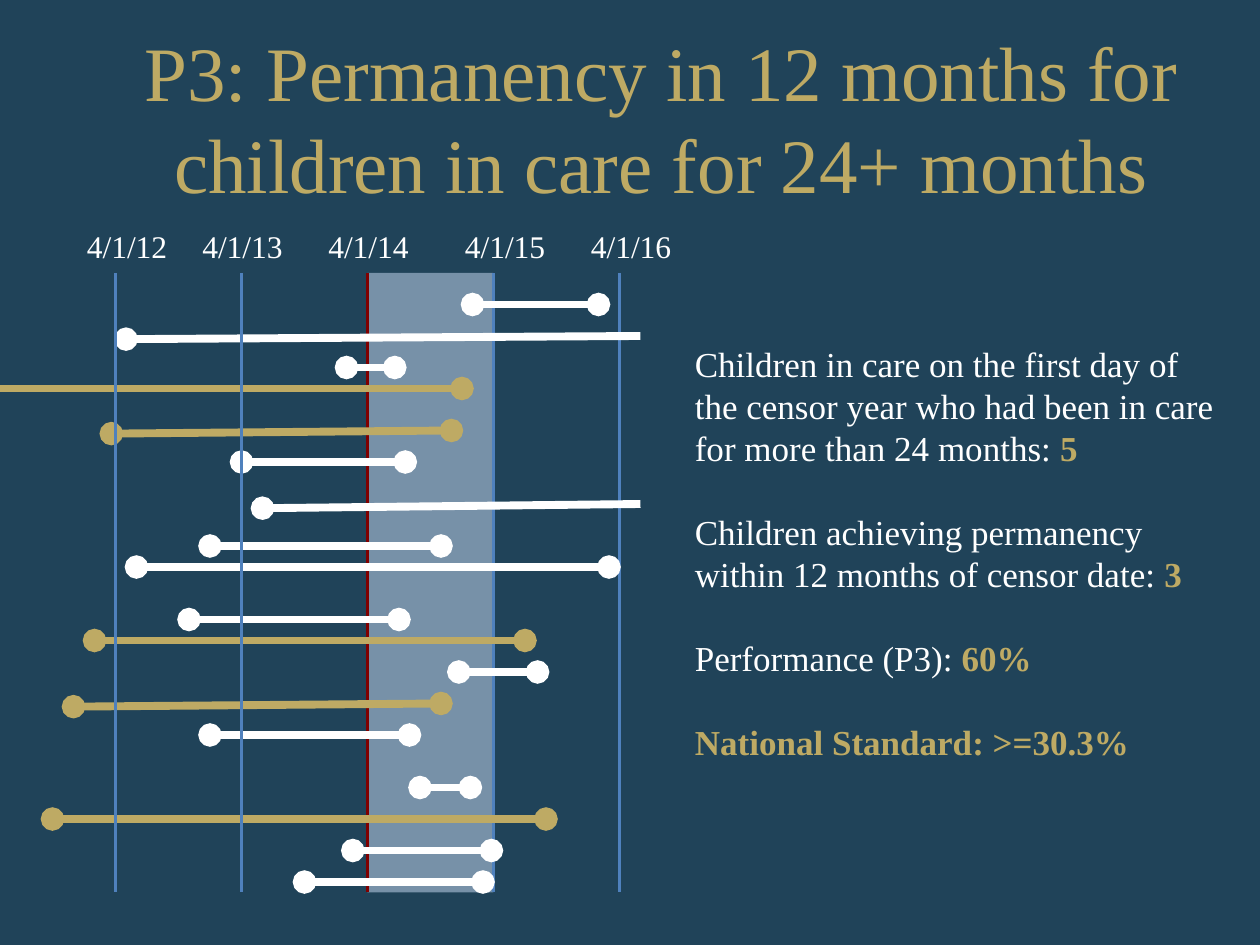
from dataclasses import dataclass

from lxml.etree import SubElement
from pptx import Presentation
from pptx.dml.color import RGBColor
from pptx.enum.shapes import MSO_CONNECTOR, MSO_SHAPE
from pptx.enum.text import MSO_ANCHOR, MSO_AUTO_SIZE, PP_ALIGN
from pptx.oxml.ns import qn
from pptx.util import Pt

PX = 7620


@dataclass(frozen=True)
class Theme:
    """Colours, font and type sizes of the slide."""
    back: str = "204359"
    gold: str = "BEAA64"
    white: str = "FFFFFF"
    blue: str = "4F81BD"
    red: str = "800000"
    band: str = "B9CDE5"
    font: str = "Times New Roman"
    title: int = 44
    body: int = 20
    label: int = 18
    rule: float = 2
    bar: float = 4.5


THEME = Theme()

DATES = [
    ("4/1/12", 110, 70),
    ("4/1/13", 230, 180),
    ("4/1/14", 350, 300),
    ("4/1/15", 470, 430),
    ("4/1/16", 590, 550),
]

STAYS = [
    (450, 30, 570, 30, THEME.white),
    (120, 63, 610, 60, THEME.white),
    (330, 90, 376, 90, THEME.white),
    (0, 110, 440, 110, THEME.gold),
    (106, 153, 430, 150, THEME.gold),
    (230, 180, 386, 180, THEME.white),
    (250, 224, 610, 220, THEME.white),
    (200, 260, 420, 260, THEME.white),
    (130, 280, 580, 280, THEME.white),
    (180, 330, 380, 330, THEME.white),
    (90, 350, 500, 350, THEME.gold),
    (437, 380, 512, 380, THEME.white),
    (70, 413, 420, 410, THEME.gold),
    (200, 440, 390, 440, THEME.white),
    (400, 490, 448, 490, THEME.white),
    (50, 520, 520, 520, THEME.gold),
    (336, 550, 468, 550, THEME.white),
    (290, 580, 460, 580, THEME.white),
]

FACTS = [
    ("Children in care on the first day of the censor year who had been "
     "in care for more than 24 months: ", "5"),
    ("Children achieving permanency within 12 months of censor date: ", "3"),
    ("Performance (P3): ", "60%"),
    ("", "National Standard: >=30.3%"),
]


def emu(*vals):
    """Turn px into EMU."""
    return [val * PX for val in vals]


def style(run, size, color, bold=False):
    """Format one run."""
    font = run.font
    font.name, font.size, font.bold = THEME.font, Pt(size), bold
    font.color.rgb = RGBColor.from_string(color)


def draw_line(slide, ends, color, width, head=False, tail=False):
    """Draw a straight line with optional round ends."""
    link = slide.shapes.add_connector(MSO_CONNECTOR.STRAIGHT, *emu(*ends))
    link.line.color.rgb = RGBColor.from_string(color)
    link.line.width = Pt(width)
    stroke = link.line._get_or_add_ln()
    for tag, shown in (("a:headEnd", head), ("a:tailEnd", tail)):
        if shown:
            SubElement(stroke, qn(tag)).set("type", "oval")
    SubElement(link._element.spPr, qn("a:effectLst"))


def add_title(slide, box):
    """Fill the title placeholder."""
    title = slide.shapes.title
    title.left, title.top, title.width, title.height = emu(*box)
    frame = title.text_frame
    frame.text = "P3: Permanency in 12 months for children in care for 24+ months"
    frame.vertical_anchor = MSO_ANCHOR.MIDDLE
    para = frame.paragraphs[0]
    para.alignment = PP_ALIGN.CENTER
    props = para._p.get_or_add_pPr()
    props.set("marL", str(60 * PX))
    props.set("indent", "0")
    style(para.runs[0], THEME.title, THEME.gold)


def add_band(slide, box):
    """Shade the censor year."""
    band = slide.shapes.add_shape(MSO_SHAPE.RECTANGLE, *emu(*box))
    band.shadow.inherit = False
    band.fill.solid()
    band.fill.fore_color.rgb = RGBColor.from_string(THEME.band)
    color = band._element.spPr.find(qn("a:solidFill"))[0]
    SubElement(color, qn("a:alpha")).set("val", "57000")
    band.line.fill.background()


def add_dates(slide, box, dates):
    """Draw the date rules with their labels above the box."""
    left, top, _, height = box
    for text, at, start in dates:
        color = THEME.red if text == "4/1/14" else THEME.blue
        ends = (left + at, top, left + at, top + height)
        draw_line(slide, ends, color, THEME.rule)
        label = slide.shapes.add_textbox(*emu(left + start, top - 50, 102, 48))
        frame = label.text_frame
        frame.text = text
        frame.word_wrap = False
        frame.auto_size = MSO_AUTO_SIZE.SHAPE_TO_FIT_TEXT
        para = frame.paragraphs[0]
        para.alignment = PP_ALIGN.CENTER
        style(para.runs[0], THEME.label, THEME.white)


def add_stays(slide, box):
    """Draw each stay, left open where it meets the edge of the box."""
    left, top, width, _ = box
    for start, high, stop, low, color in STAYS:
        ends = (left + start, top + high, left + stop, top + low)
        draw_line(slide, ends, color, THEME.bar, start > 0, stop < width)


def add_chart(slide, box):
    """Draw the timeline of stays in care."""
    left, top, _, height = box
    add_band(slide, (left + 350, top, 120, height))
    add_dates(slide, box, DATES[2:])
    add_stays(slide, box)
    add_dates(slide, box, DATES[:2])


def add_facts(slide, box):
    """Write the counts and the result."""
    frame = slide.shapes.add_textbox(*emu(*box)).text_frame
    frame.word_wrap = True
    frame.auto_size = MSO_AUTO_SIZE.SHAPE_TO_FIT_TEXT
    for at, (lead, value) in enumerate(FACTS):
        para = frame.add_paragraph() if at else frame.paragraphs[0]
        para.space_before = Pt(24 if at else 0)
        if lead:
            para.text = lead
            style(para.runs[0], THEME.body, THEME.white)
        run = para.add_run()
        run.text = value
        style(run, THEME.body, THEME.gold, True)


def main():
    """Build and save the slide."""
    deck = Presentation()
    deck.slide_width, deck.slide_height = emu(1200, 900)
    slide = deck.slides.add_slide(deck.slide_layouts[5])
    fill = slide.background.fill
    fill.solid()
    fill.fore_color.rgb = RGBColor.from_string(THEME.back)
    add_title(slide, (60, 36, 1080, 150))
    add_chart(slide, (0, 260, 610, 590))
    add_facts(slide, (650, 320, 530, 416))
    deck.save("out.pptx")


if __name__ == "__main__":
    main()
